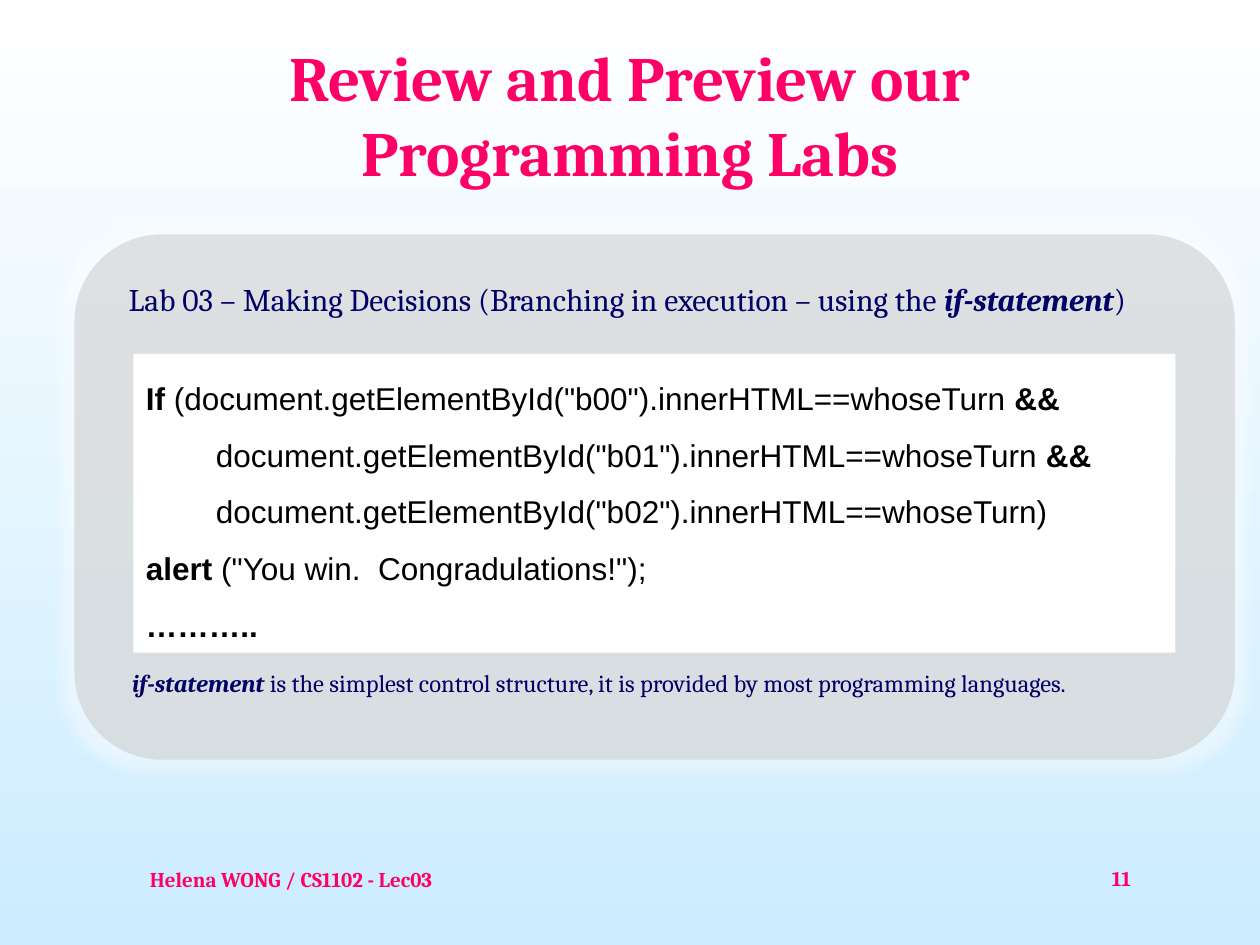
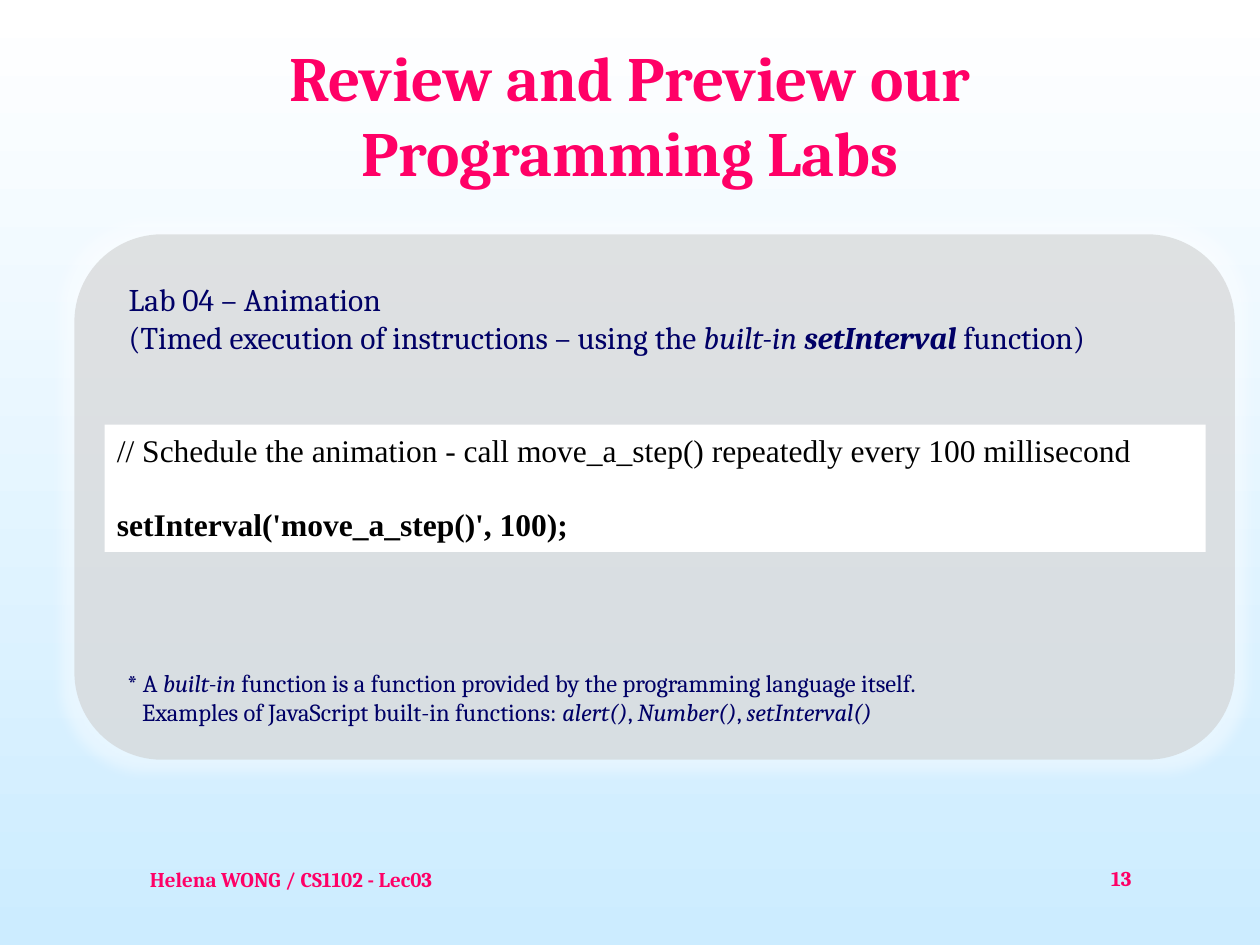
from dataclasses import dataclass

from lxml.etree import SubElement
from pptx import Presentation
from pptx.dml.color import RGBColor as RGB
from pptx.enum.shapes import MSO_SHAPE as Shape
from pptx.enum.text import MSO_ANCHOR as Anchor, MSO_AUTO_SIZE as AutoSize, PP_ALIGN as Align
from pptx.oxml.ns import qn
from pptx.util import Inches, Pt


@dataclass(frozen=True)
class Theme:
    # Colours
    accent: RGB = RGB(0xFF, 0x00, 0x66)
    ink: RGB = RGB(0x00, 0x00, 0x66)
    code_ink: RGB = RGB(0, 0, 0)
    white: RGB = RGB(0xFF, 0xFF, 0xFF)
    sky: RGB = RGB(0xCC, 0xEC, 0xFF)
    panel: RGB = RGB(0xCC, 0xCC, 0xCC)
    panel_opacity: int = 56
    glow_opacity: int = 40
    # Type
    font: str = "Cambria"
    title_size: int = 36
    text_size: int = 18
    note_size: int = 14
    footer_size: int = 12


def write(frame, paragraphs, *, size, color, font, bold=False, align=Align.LEFT,
          anchor=Anchor.TOP, line_spacing=1.0, gap=0, hanging=0):
    """Fill a frame; a paragraph is a list of (text, marks), marks being "", "b", "i" or "bi"."""
    frame.word_wrap = True
    frame.auto_size = AutoSize.NONE
    frame.vertical_anchor = anchor
    for index, runs in enumerate(paragraphs):
        paragraph = frame.paragraphs[0] if index == 0 else frame.add_paragraph()
        properties = paragraph._p.get_or_add_pPr()
        properties.set("marL", str(Inches(hanging)))
        properties.set("indent", str(-Inches(hanging)))
        SubElement(properties, qn("a:buNone"))
        paragraph.alignment = align
        paragraph.line_spacing = line_spacing
        paragraph.space_before = Pt(gap if index else 0)
        for text, marks in runs:
            for number, line in enumerate(text.split("\n")):
                if number:
                    paragraph.add_line_break()
                run = paragraph.add_run()
                run.text = line
                run.font.name = font
                run.font.size = Pt(size)
                run.font.color.rgb = color
                run.font.bold = bold or "b" in marks
                run.font.italic = "i" in marks


def place(shape, left, top, width, height):
    shape.left, shape.top = Inches(left), Inches(top)
    shape.width, shape.height = Inches(width), Inches(height)


class LabDeck:
    def __init__(self, theme):
        self.theme = theme
        self.prs = Presentation()
        self.prs.slide_width, self.prs.slide_height = Inches(10), Inches(7.5)
        self.slide = None
        # Background shared through the master
        backdrop = self.prs.slide_master.background.fill
        backdrop.gradient()
        backdrop.gradient_angle = 270
        for stop, color, position in zip(backdrop.gradient_stops, (theme.white, theme.sky), (0, 1)):
            stop.color.rgb = color
            stop.position = position

    def start(self, title, page):
        self.slide = self.prs.slides.add_slide(self.prs.slide_layouts[1])
        self.panel()
        heading = self.slide.shapes.title
        place(heading, 0.75, 0.28, 8.5, 1.25)
        write(heading.text_frame, [[(title, "")]], size=self.theme.title_size,
              color=self.theme.accent, font=self.theme.font, bold=True,
              align=Align.CENTER, anchor=Anchor.MIDDLE)
        self.footer("Helena WONG / CS1102 - Lec03", 1.09, 6.83, 2.89)
        self.footer(str(page), 7.86, 6.82, 2.08, align=Align.CENTER)

    def box(self, kind, left, top, width, height, color):
        shape = self.slide.shapes.add_shape(
            kind, Inches(left), Inches(top), Inches(width), Inches(height))
        shape.shadow.inherit = False
        shape.fill.solid()
        shape.fill.fore_color.rgb = color
        shape.line.fill.background()
        return shape

    def panel(self):
        panel = self.box(Shape.ROUNDED_RECTANGLE, 0.59, 1.86, 9.21, 4.17, self.theme.panel)
        properties = panel._element.spPr
        # Translucent fill with a soft white glow
        fill_color = properties.find(qn("a:solidFill")).find(qn("a:srgbClr"))
        SubElement(fill_color, qn("a:alpha"), val=str(self.theme.panel_opacity * 1000))
        glow = SubElement(properties.find(qn("a:effectLst")), qn("a:glow"), rad=str(Inches(0.19)))
        glow_color = SubElement(glow, qn("a:srgbClr"), val=str(self.theme.white))
        SubElement(glow_color, qn("a:alpha"), val=str(self.theme.glow_opacity * 1000))
        # Behind the placeholders
        self.slide.shapes._spTree.insert(2, panel._element)

    def lead(self, runs):
        body = self.slide.placeholders[1]
        place(body, 0.92, 2.17, 8.58, 0.55)
        write(body.text_frame, [runs], size=self.theme.text_size,
              color=self.theme.ink, font=self.theme.font)

    def code(self, lines, left, top, width, height, font, **spacing):
        listing = self.box(Shape.RECTANGLE, left, top, width, height, self.theme.white)
        write(listing.text_frame, lines, size=self.theme.text_size,
              color=self.theme.code_ink, font=font, **spacing)

    def text(self, runs, left, top, width, height, **style):
        label = self.slide.shapes.add_textbox(
            Inches(left), Inches(top), Inches(width), Inches(height))
        write(label.text_frame, [runs], font=self.theme.font, **style)

    def note(self, runs, left=0.91, hanging=0):
        self.text(runs, left, 5.25, 8.58, 0.55, size=self.theme.note_size,
                  color=self.theme.ink, hanging=hanging)

    def footer(self, words, left, top, width, align=Align.LEFT):
        self.text([(words, "")], left, top, width, 0.5, size=self.theme.footer_size,
                  color=self.theme.accent, bold=True, align=align)


def main():
    deck = LabDeck(Theme())
    labs_title = "Review and Preview our Programming Labs"

    # Lab 03: branching
    deck.start(labs_title, 11)
    deck.lead([("Lab 03 – Making Decisions (Branching in execution – using the ", ""),
               ("if-statement", "bi"), (")", "")])
    deck.code([
        [("If", "b"), (' (document.getElementById("b00").innerHTML==whoseTurn ', ""), ("&&", "b")],
        [('        document.getElementById("b01").innerHTML==whoseTurn ', ""), ("&&", "b")],
        [('        document.getElementById("b02").innerHTML==whoseTurn)', "")],
        [("alert ", "b"), ('("You win.  Congradulations!");', "")],
        [("………..", "b")],
    ], 1.06, 2.81, 8.27, 2.37, "Arial", line_spacing=1.5)
    deck.note([("if-statement ", "bi"),
               ("is the simplest control structure, it is provided by most "
                "programming languages.", "")], left=0.95)

    # Lab 04: animation
    deck.start(labs_title, 13)
    deck.lead([("Lab 04 – Animation\n(Timed execution of instructions – using the ", ""),
               ("built-in ", "i"), ("setInterval", "bi"), (" function)", "")])
    deck.code([
        [("// Schedule the animation - call move_a_step() repeatedly every 100 millisecond", "")],
        [("setInterval('move_a_step()', 100);", "b")],
    ], 0.83, 3.37, 8.74, 1.01, "Times New Roman", gap=21)
    deck.note([("* A ", ""), ("built-in ", "i"),
               ("function is a function provided by the programming language itself.\n"
                "Examples of JavaScript built-in functions: ", ""),
               ("alert()", "i"), (", ", ""), ("Number()", "i"), (", ", ""),
               ("setInterval()", "i")], hanging=0.12)

    deck.prs.save("out.pptx")


if __name__ == "__main__":
    main()
